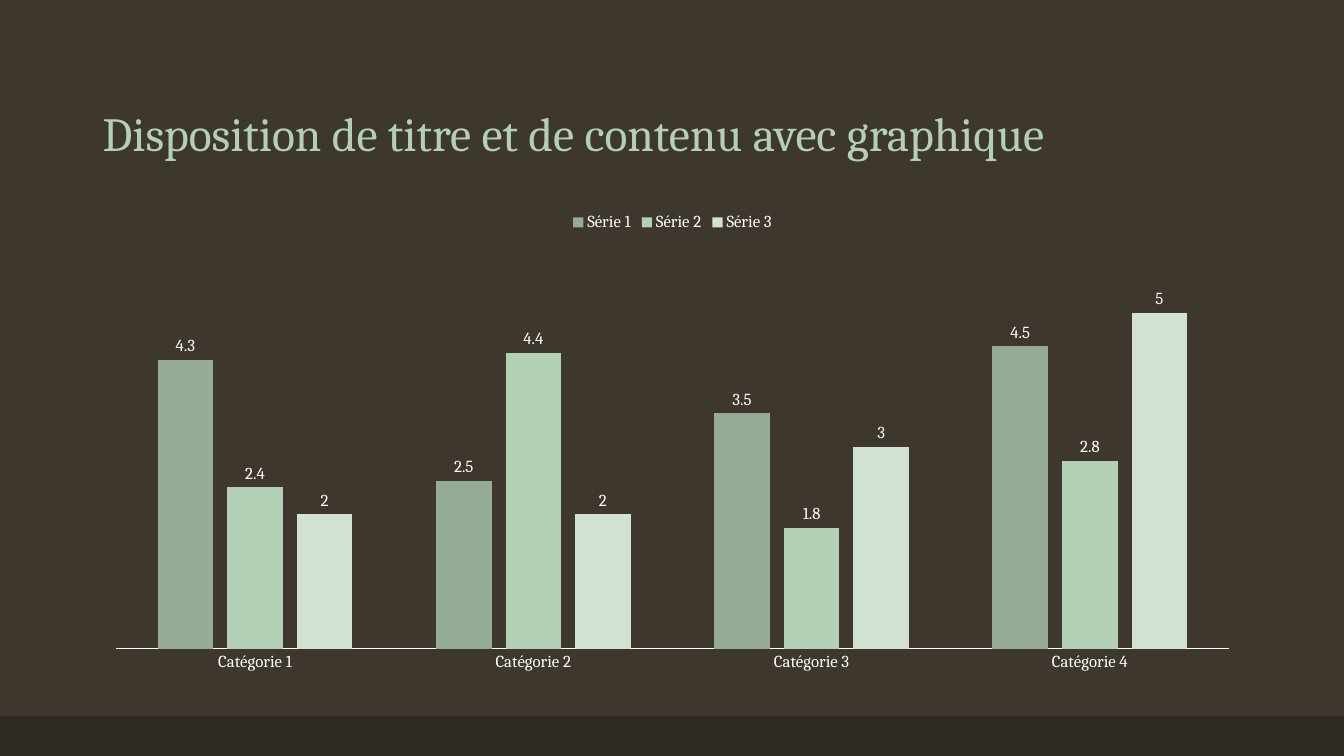
import dataclasses

import pptx
import pptx.chart.data
import pptx.dml.color
import pptx.enum.chart
import pptx.enum.shapes
import pptx.enum.text
import pptx.util

Inches = pptx.util.Inches


@dataclasses.dataclass(frozen=True)
class Theme:
    """Hold the colours, font and type sizes."""
    back: str = "3D372E"
    band: str = "2E2923"
    title: str = "B2D0B4"
    text: str = "FFFFFF"
    bars: tuple = ("94AC95", "B2D0B4", "D1E2D2")
    font: str = "Cambria"
    head: int = 34
    label: int = 12


THEME = Theme()
CATS = [f"Catégorie {n}" for n in range(1, 5)]
DATA = {
    "Série 1": (4.3, 2.5, 3.5, 4.5),
    "Série 2": (2.4, 4.4, 1.8, 2.8),
    "Série 3": (2, 2, 3, 5),
}


def paint(fill, tint):
    """Give a fill one solid colour."""
    fill.solid()
    fill.fore_color.rgb = pptx.dml.color.RGBColor.from_string(tint)


def style(font, size, tint):
    """Set the face, size and colour of a font."""
    font.name = THEME.font
    font.size = pptx.util.Pt(size)
    font.color.rgb = pptx.dml.color.RGBColor.from_string(tint)


def add_band(slide, box):
    """Draw the dark band at the foot of the slide."""
    band = slide.shapes.add_shape(
        pptx.enum.shapes.MSO_SHAPE.RECTANGLE, *map(Inches, box))
    band.shadow.inherit = False
    paint(band.fill, THEME.band)
    band.line.fill.background()


def add_title(slide, box, words):
    """Write the title at the bottom of its box."""
    frame = slide.shapes.add_textbox(*map(Inches, box)).text_frame
    frame.word_wrap = True
    frame.vertical_anchor = pptx.enum.text.MSO_ANCHOR.BOTTOM
    para = frame.paragraphs[0]
    para.line_spacing = 0.9
    run = para.add_run()
    run.text = words
    style(run.font, THEME.head, THEME.title)


def add_graph(slide, box):
    """Place the clustered columns with legend and labels."""
    data = pptx.chart.data.CategoryChartData()
    data.categories = CATS
    for name, vals in DATA.items():
        data.add_series(name, vals)
    kind = pptx.enum.chart.XL_CHART_TYPE.COLUMN_CLUSTERED
    chart = slide.shapes.add_chart(kind, *map(Inches, box), data).chart
    style(chart.font, THEME.label, THEME.text)
    chart.has_title = False
    chart.has_legend = True
    chart.legend.position = pptx.enum.chart.XL_LEGEND_POSITION.TOP
    chart.legend.include_in_layout = False
    style(chart.legend.font, THEME.label, THEME.text)
    set_axes(chart)
    plot = chart.plots[0]
    plot.gap_width = 150
    plot.overlap = -25
    plot.vary_by_categories = False
    for series, tint in zip(plot.series, THEME.bars):
        paint(series.format.fill, tint)
        series.invert_if_negative = False
        labels = series.data_labels
        labels.show_value = True
        labels.position = pptx.enum.chart.XL_LABEL_POSITION.OUTSIDE_END
        style(labels.font, THEME.label, THEME.text)


def set_axes(chart):
    """Show the category line and hide the value axis."""
    none = pptx.enum.chart.XL_TICK_MARK.NONE
    axis = chart.category_axis
    axis.major_tick_mark = none
    axis.minor_tick_mark = none
    paint(axis.format.line.fill, THEME.text)
    axis.format.line.width = pptx.util.Pt(0.75)
    style(axis.tick_labels.font, THEME.label, THEME.text)
    scale = chart.value_axis
    scale.visible = False
    scale.has_major_gridlines = False
    scale.minimum_scale = 0
    scale.maximum_scale = 6


def main():
    """Build and save the slide."""
    deck = pptx.Presentation()
    deck.slide_width = Inches(13.33)
    deck.slide_height = Inches(7.5)
    slide = deck.slides.add_slide(deck.slide_layouts[6])
    paint(slide.background.fill, THEME.back)
    add_band(slide, (0, 7.1, 13.33, 0.4))
    add_title(slide, (0.92, 0.4, 11.5, 1.25),
              "Disposition de titre et de contenu avec graphique")
    add_graph(slide, (0.92, 2, 11.5, 4.76))
    deck.save("out.pptx")


if __name__ == "__main__":
    main()
